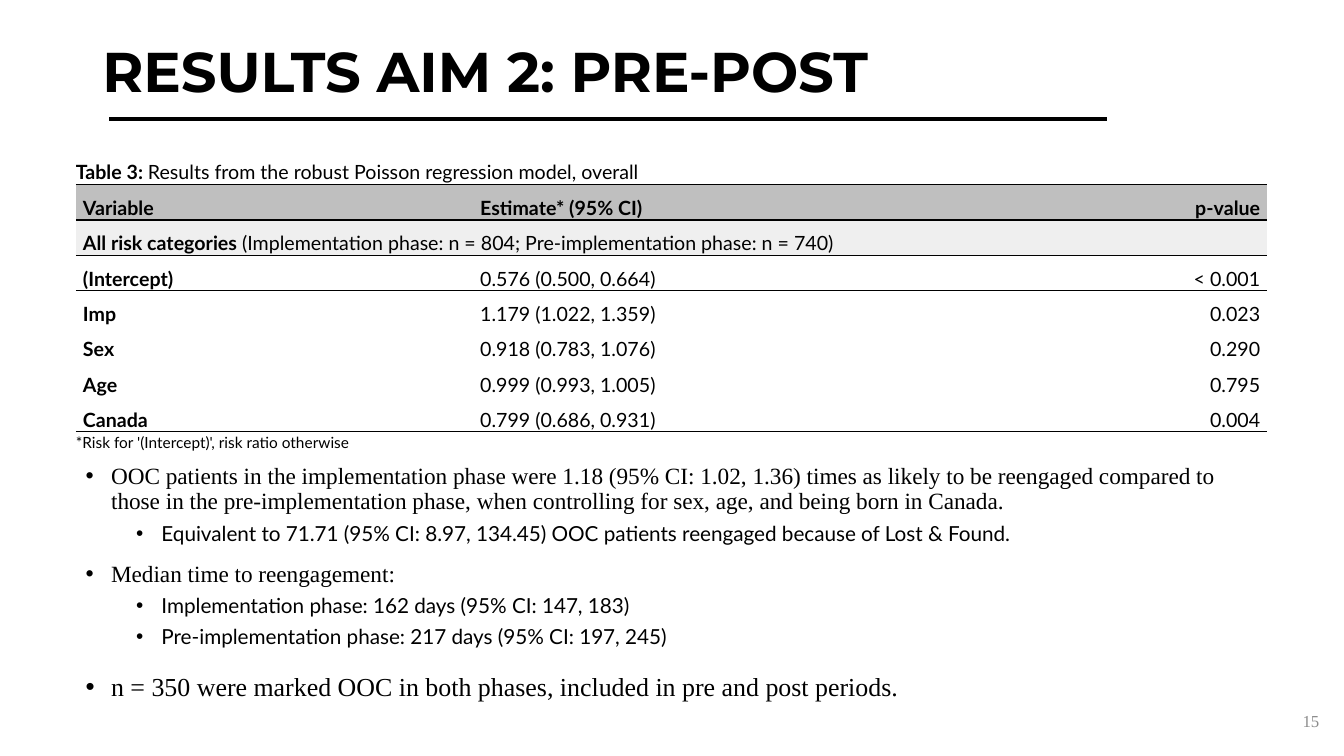
import dataclasses

import lxml.etree
import pptx
import pptx.dml.color
import pptx.enum.shapes
import pptx.enum.text
import pptx.oxml.ns
import pptx.util

Cm = pptx.util.Cm
Pt = pptx.util.Pt
qn = pptx.oxml.ns.qn
Align = pptx.enum.text.PP_ALIGN
MIDDLE = pptx.enum.text.MSO_ANCHOR.MIDDLE


@dataclasses.dataclass(frozen=True)
class Theme:
    ink: str = "000000"
    muted: str = "8C8C8C"
    header: str = "BFBFBF"
    group: str = "EFEFEF"
    paper: str = "FFFFFF"
    heading_font: str = "Montserrat"
    table_font: str = "Lato"
    body_font: str = "Times New Roman"
    title_size: float = 40
    table_size: float = 14
    note_size: float = 11
    number_size: float = 12
    point_size: float = 16.6
    detail_size: float = 14.8
    closing_size: float = 18.5


theme = Theme()


def add_span(para, text, font, size, bold=False, color=theme.ink):
    span = para.add_run()
    span.text = text
    span.font.name = font
    span.font.size = Pt(size)
    span.font.bold = bold
    span.font.color.rgb = pptx.dml.color.RGBColor.from_string(color)


def add_rule(cell, side, width):
    """Draw one border of a cell; side is T or B."""
    line = lxml.etree.SubElement(cell._tc.get_or_add_tcPr(), qn(f"a:ln{side}"), w=str(Pt(width)))
    fill = lxml.etree.SubElement(line, qn("a:solidFill"))
    lxml.etree.SubElement(fill, qn("a:srgbClr"), val=theme.ink)


deck = pptx.Presentation()
deck.slide_width = Cm(33.87)
deck.slide_height = Cm(19.05)
page = deck.slides.add_slide(deck.slide_layouts[6])

# Title, its underline and the page number
underline = page.shapes.add_connector(
    pptx.enum.shapes.MSO_CONNECTOR.STRAIGHT, Cm(2.75), Cm(3), Cm(27.9), Cm(3))
underline.line.width = Pt(2.25)
underline.line.color.rgb = pptx.dml.color.RGBColor.from_string(theme.ink)
lxml.etree.SubElement(underline._element.spPr, qn("a:effectLst"))

title = page.shapes.add_textbox(Cm(2.33), Cm(0.03), Cm(29.21), Cm(3.68)).text_frame
title.word_wrap = True
title.vertical_anchor = MIDDLE
title.paragraphs[0].line_spacing = 0.9
add_span(title.paragraphs[0], "RESULTS AIM 2: PRE-POST", theme.heading_font, theme.title_size, True)

number = page.shapes.add_textbox(Cm(25.88), Cm(17.65), Cm(7.62), Cm(1.02)).text_frame
number.word_wrap = True
number.vertical_anchor = MIDDLE
number.paragraphs[0].alignment = Align.RIGHT
add_span(number.paragraphs[0], "15", theme.body_font, theme.number_size, color=theme.muted)

# Regression table: each cell is a list of (text, bold) spans
caption = [("Table 3: ", True), ("Results from the robust Poisson regression model, overall", False)]
headings = [[(name, True)] for name in ("Variable", "Estimate* (95% CI)", "p-value")]
group = [
    ("All risk categories ", True),
    ("(Implementation phase: n = 804; Pre-implementation phase: n = 740)", False),
]
estimates = [
    ("(Intercept)", "0.576 (0.500, 0.664)", "< 0.001"),
    ("Imp", "1.179 (1.022, 1.359)", "0.023"),
    ("Sex", "0.918 (0.783, 1.076)", "0.290"),
    ("Age", "0.999 (0.993, 1.005)", "0.795"),
    ("Canada", "0.799 (0.686, 0.931)", "0.004"),
]
note = [("*Risk for '(Intercept)', risk ratio otherwise", False)]
rows = [[caption], headings, [group]]
rows += [[[(name, True)], [(estimate, False)], [(p_value, False)]] for name, estimate, p_value in estimates]
rows += [[note]]
last = len(rows) - 1
fills = {1: theme.header, 2: theme.group}
rules = {0: 1.5, 1: 1.5, 2: 1, last - 1: 1}  # width of the line below a row

frame = page.shapes.add_table(len(rows), 3, Cm(1.91), Cm(3.71), Cm(30.05), Cm(7.1))
table = frame.table
table.first_row = False
table.horz_banding = False
no_style = "{2D5ABB26-0587-4C30-8999-92F81FD0307C}"
table._tbl.tblPr.find(qn("a:tableStyleId")).text = no_style
for column in table.columns:
    column.width = Cm(10.01)
for index, row in enumerate(rows):
    table.rows[index].height = Cm({0: 0.94, last: 0.48}.get(index, 0.81))
    for column in range(3):
        cell = table.cell(index, column)
        cell.margin_left = cell.margin_right = cell.margin_top = cell.margin_bottom = 0
        cell.vertical_anchor = MIDDLE
        for side, above in (("T", index - 1), ("B", index)):
            if above in rules:
                add_rule(cell, side, rules[above])
        cell.fill.solid()
        cell.fill.fore_color.rgb = pptx.dml.color.RGBColor.from_string(fills.get(index, theme.paper))
    if len(row) == 1:
        table.cell(index, 0).merge(table.cell(index, 2))
    for column, spans in enumerate(row):
        para = table.cell(index, column).text_frame.paragraphs[0]
        para.line_spacing = 1.07 if index == last else 1.5
        if 0 < index < last:
            para.space_before = para.space_after = Pt(2)
            for margin in ("marL", "marR"):
                para._p.get_or_add_pPr().set(margin, str(Cm(0.18)))
        if column == 2:
            para.alignment = Align.RIGHT
        for text, bold in spans:
            add_span(para, text, theme.table_font, theme.note_size if index == last else theme.table_size, bold)

# Findings: level, space before, size, text
findings = [
    (0, 18, theme.point_size,
     "OOC patients in the implementation phase were 1.18 (95% CI: 1.02, 1.36) times as likely to be "
     "reengaged compared to those in the pre-implementation phase, when controlling for sex, age, "
     "and being born in Canada."),
    (1, 6, theme.detail_size,
     "Equivalent to 71.71 (95% CI: 8.97, 134.45) OOC patients reengaged because of Lost & Found."),
    (0, 12, theme.point_size, "Median time to reengagement:"),
    (1, 6, theme.detail_size, "Implementation phase: 162 days (95% CI: 147, 183)"),
    (1, 6, theme.detail_size, "Pre-implementation phase: 217 days (95% CI: 197, 245)"),
    (0, 18, theme.closing_size,
     "n = 350 were marked OOC in both phases, included in pre and post periods."),
]
body = page.shapes.add_textbox(Cm(1.91), Cm(11.58), Cm(29.21), Cm(7.11)).text_frame
body.word_wrap = True
for index, (level, before, size, text) in enumerate(findings):
    para = body.add_paragraph() if index else body.paragraphs[0]
    para.level = level
    para.line_spacing = 0.9
    para.space_before = Pt(before)
    properties = para._p.get_or_add_pPr()
    properties.set("marL", str(Cm(0.64 + 1.27 * level)))
    properties.set("indent", str(Cm(-0.64)))
    lxml.etree.SubElement(properties, qn("a:buFont"), typeface="Arial")
    lxml.etree.SubElement(properties, qn("a:buChar"), char="•")
    add_span(para, text, theme.table_font if level else theme.body_font, size)

deck.save("out.pptx")
